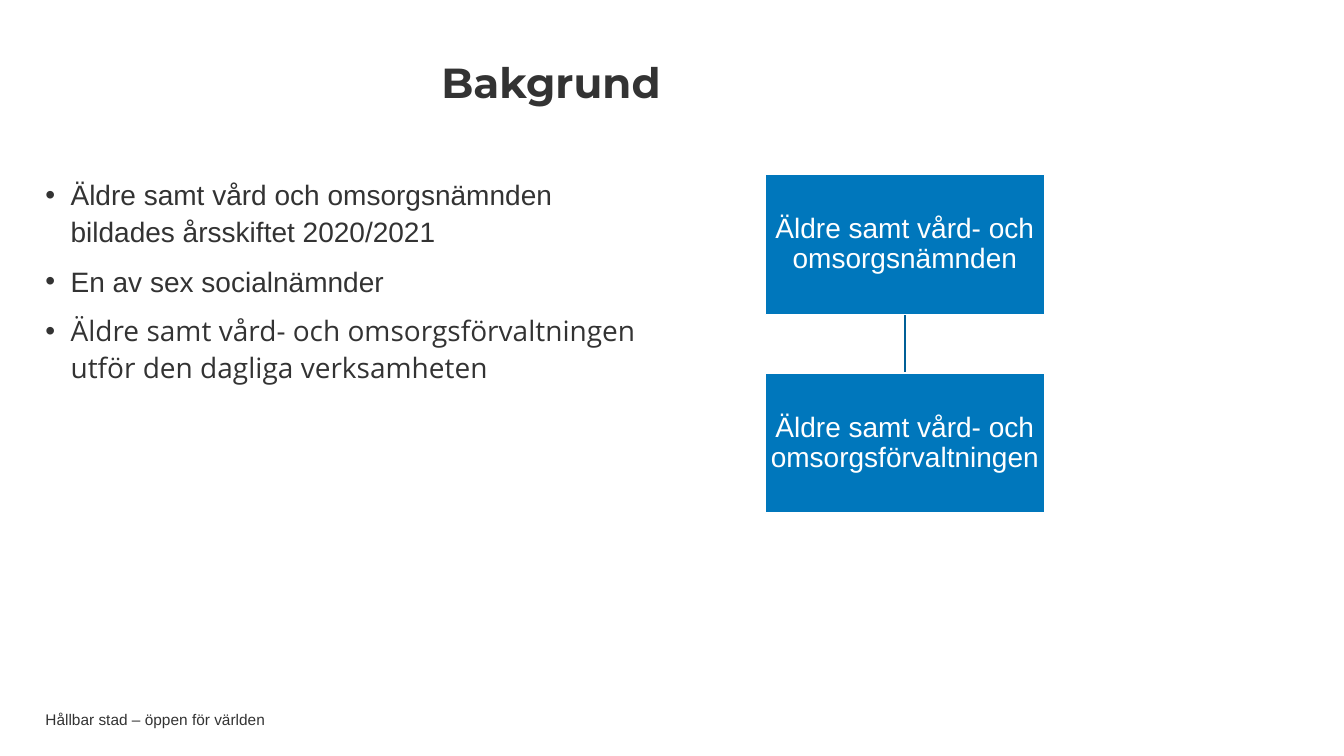
from lxml import etree
from pptx import Presentation
from pptx.dml.color import RGBColor
from pptx.enum.shapes import MSO_CONNECTOR as CONNECTOR, MSO_SHAPE as SHAPE
from pptx.enum.text import MSO_ANCHOR as ANCHOR, PP_ALIGN as ALIGN
from pptx.oxml.ns import qn
from pptx.util import Inches, Pt

COLORS = {"text": "333333", "box": "0077BC", "line": "005F97", "white": "FFFFFF"}


def color(name):
    return RGBColor.from_string(COLORS[name])


def add_text(para, text, size, font="Arial", ink="text", bold=False):
    span = para.add_run()
    span.text = text
    span.font.size = Pt(size)
    span.font.name = font
    span.font.bold = bold
    span.font.color.rgb = color(ink)


deck = Presentation()
deck.slide_width, deck.slide_height = Inches(13.33), Inches(7.5)
page = deck.slides.add_slide(deck.slide_layouts[6])

# Footer, title and bullet list share the left margin
frames = []
for top, width, height, anchor in [
    (7.06, 9.45, 0.16, ANCHOR.MIDDLE),
    (0.44, 10.03, 0.81, ANCHOR.MIDDLE),
    (1.73, 5.91, 4.09, ANCHOR.TOP),
]:
    box = page.shapes.add_textbox(Inches(0.45), Inches(top), Inches(width), Inches(height))
    frame = box.text_frame
    frame.word_wrap = True
    frame.vertical_anchor = anchor
    frame.margin_left = frame.margin_right = frame.margin_top = frame.margin_bottom = 0
    frames.append(frame)
footer, title, body = frames

add_text(footer.paragraphs[0], "Hållbar stad – öppen för världen", 11)

para = title.paragraphs[0]
para.alignment = ALIGN.CENTER
para.line_spacing = 0.9
add_text(para, "Bakgrund", 30, "Montserrat", bold=True)

bullets = [
    ("Äldre samt vård och omsorgsnämnden bildades årsskiftet 2020/2021", "Arial"),
    ("En av sex socialnämnder", "Arial"),
    ("Äldre samt vård- och omsorgsförvaltningen utför den dagliga verksamheten", "Open Sans"),
]
for index, (text, font) in enumerate(bullets):
    para = body.add_paragraph() if index else body.paragraphs[0]
    props = para._p.get_or_add_pPr()
    props.set("marL", str(Inches(0.25)))
    props.set("indent", str(-Inches(0.25)))
    etree.SubElement(props, qn("a:buFont")).set("typeface", "Arial")
    etree.SubElement(props, qn("a:buChar")).set("char", "•")
    para.line_spacing = 1.1
    para.space_before = Pt(6 if index else 0)
    para.space_after = Pt(3)
    add_text(para, text, 20, font)

# Organisation chart: two boxes joined by a line
left, top, width, height, gap = 7.59, 1.73, 2.77, 1.39, 0.58
center = Inches(left + width / 2)
link = page.shapes.add_connector(
    CONNECTOR.STRAIGHT, center, Inches(top + height), center, Inches(top + height + gap))
link.line.color.rgb = color("line")
link.line.width = Pt(1)
etree.SubElement(link._element.spPr, qn("a:effectLst"))

units = ["Äldre samt vård- och omsorgsnämnden", "Äldre samt vård- och omsorgsförvaltningen"]
for index, unit in enumerate(units):
    box = page.shapes.add_shape(
        SHAPE.RECTANGLE, Inches(left), Inches(top + index * (height + gap)),
        Inches(width), Inches(height))
    box.shadow.inherit = False
    box.fill.solid()
    box.fill.fore_color.rgb = color("box")
    box.line.color.rgb = color("white")
    box.line.width = Pt(1)
    frame = box.text_frame
    frame.word_wrap = True
    frame.vertical_anchor = ANCHOR.MIDDLE
    frame.margin_left = frame.margin_right = Inches(0.01)
    frame.margin_top = frame.margin_bottom = Inches(0.01)
    para = frame.paragraphs[0]
    para.alignment = ALIGN.CENTER
    para.line_spacing = 0.9
    add_text(para, unit, 20, ink="white")

deck.save("out.pptx")
